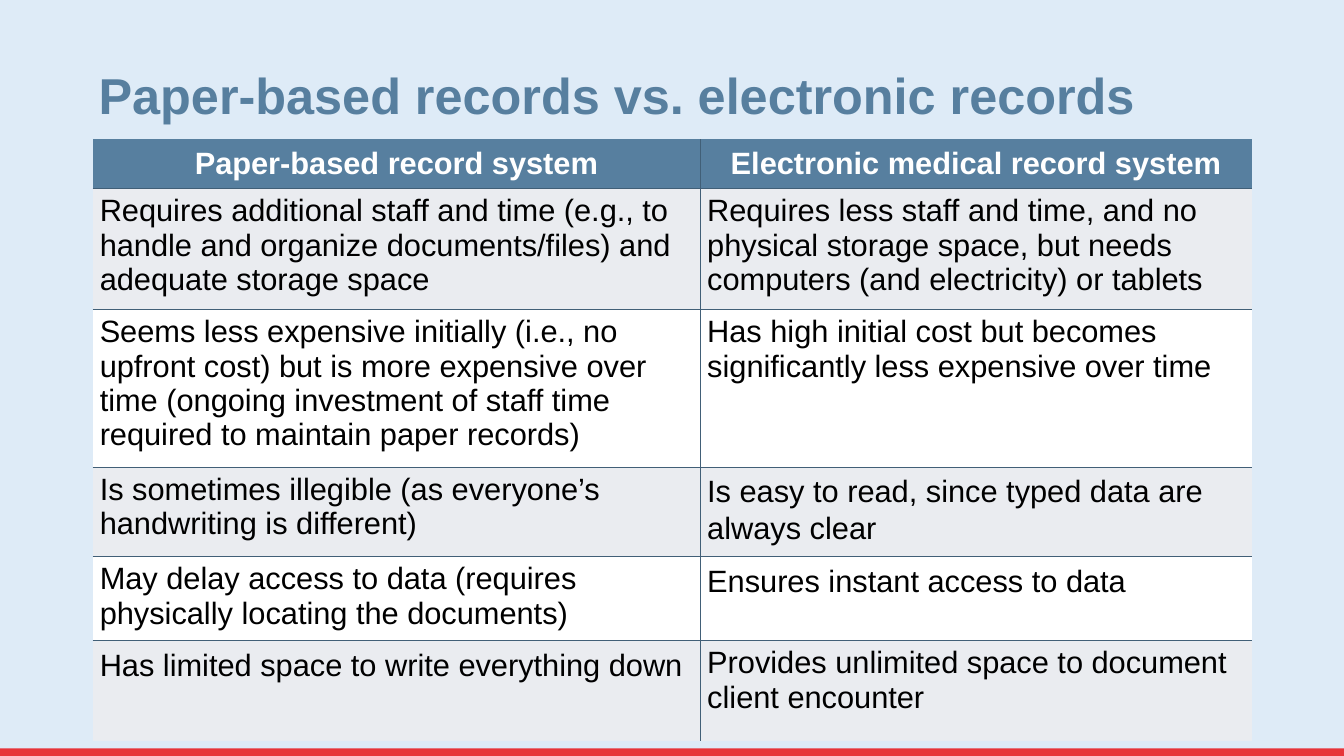
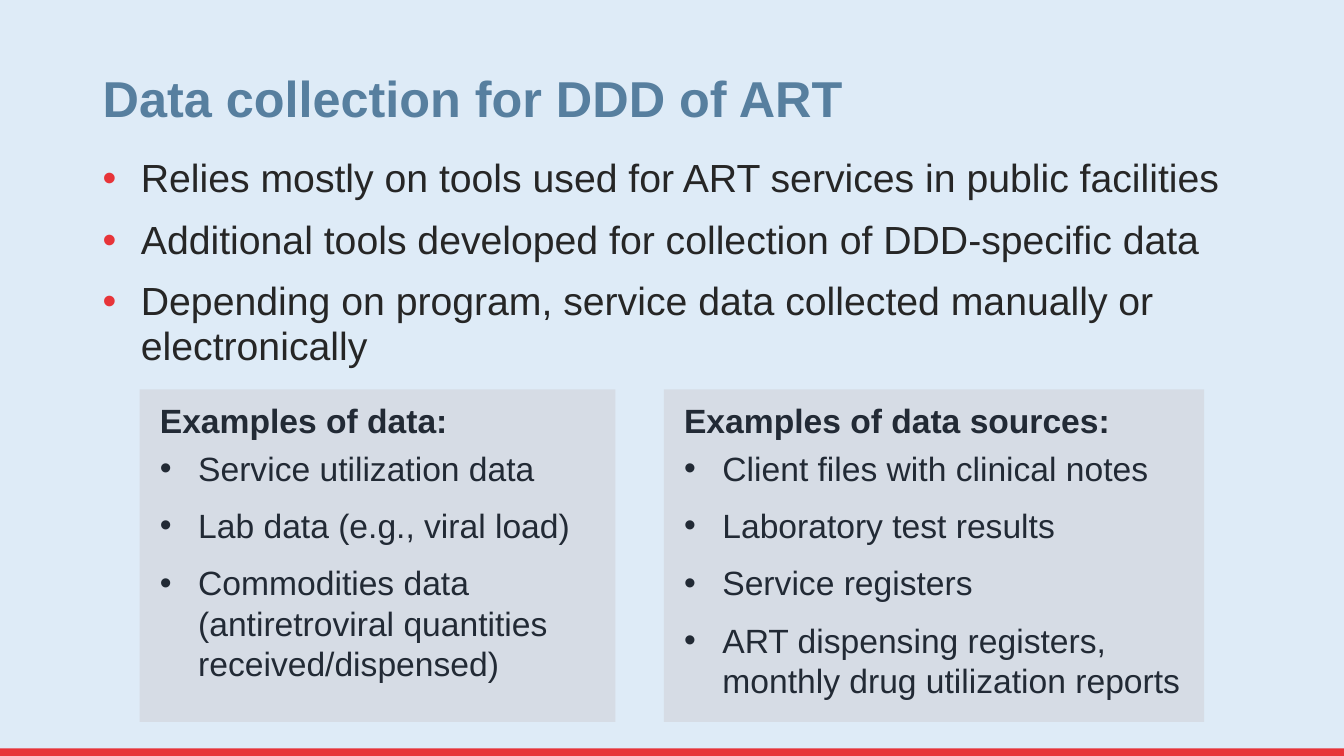
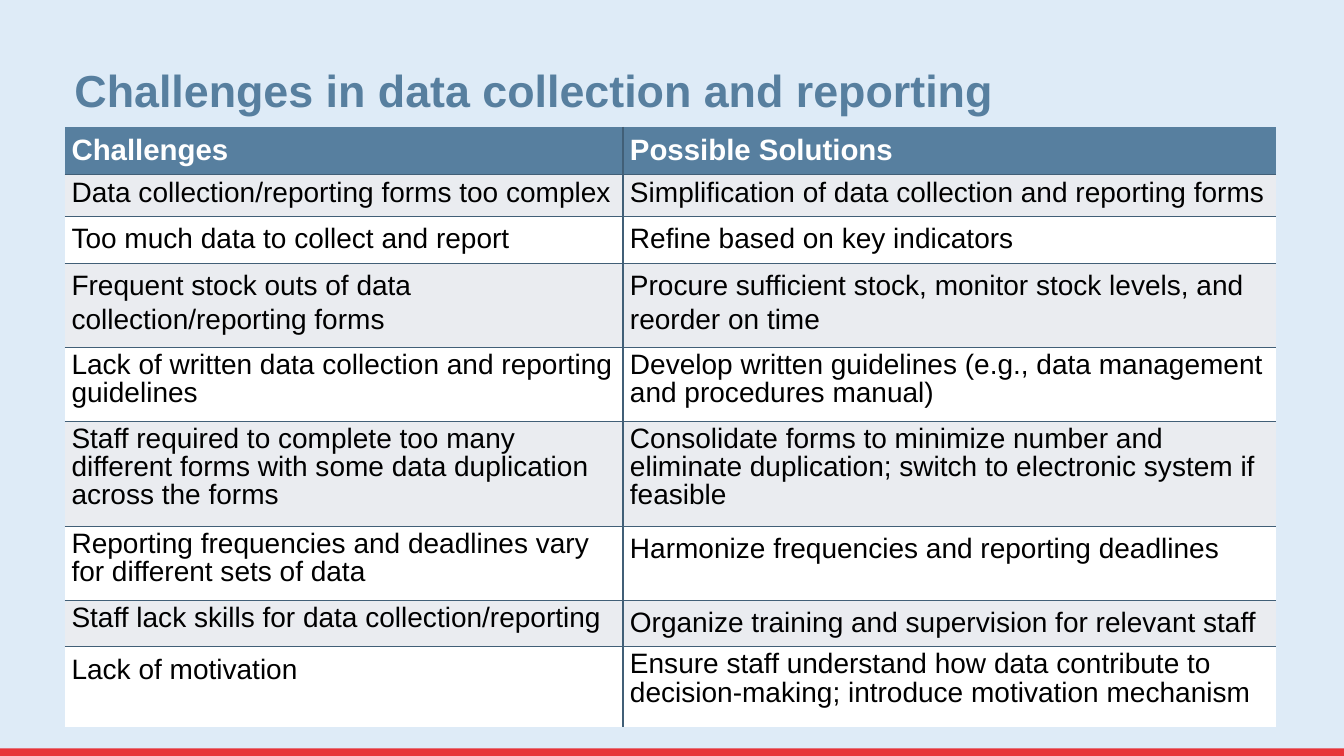
from dataclasses import dataclass

from lxml import etree
from pptx import Presentation
from pptx import util as u
from pptx.dml.color import RGBColor
from pptx.enum import shapes, text
from pptx.oxml import ns

COLORS = {
    "background": "DEEBF7", "band": "E73439", "accent": "577F9F",
    "rule": "415F77", "stripe": "EAECF0", "white": "FFFFFF",
    "black": "000000", "body": "262626", "card": "D6DCE5", "card_text": "222A35",
}
FONT = "Arial"
WIDTH, HEIGHT = u.Inches(13.33), u.Inches(7.5)
INDENT = u.Inches(0.38)
LOOSE, TIGHT = 1.07, 0.9  # line spacings


@dataclass(frozen=True)
class Frame:
    """Left, top, width and height in percent of the slide's size."""
    left: float
    top: float
    width: float
    height: float

    def emu(self) -> tuple:
        return across(self.left), down(self.top), across(self.width), down(self.height)


@dataclass(frozen=True)
class Style:
    size: float
    color: str
    bold: bool = False
    spacing: float = 1.0
    before: float = 0
    after: float = 0
    bullet: str = ""  # colour name of the bullet
    align: text.PP_ALIGN = text.PP_ALIGN.LEFT


@dataclass(frozen=True)
class Cell:
    words: str
    spacing: float = 1.0


@dataclass(frozen=True)
class Grid:
    left: float
    top: float
    columns: tuple
    rows: tuple
    header: Style
    size: float
    cells: tuple


@dataclass(frozen=True)
class Card:
    left: float
    width: float
    heading: str
    items: tuple


def across(percent: float) -> u.Emu:
    return u.Emu(round(WIDTH * percent / 100))


def down(percent: float) -> u.Emu:
    return u.Emu(round(HEIGHT * percent / 100))


def rgb(name: str) -> RGBColor:
    return RGBColor.from_string(COLORS[name])


def write(para, words: str, style: Style) -> None:
    para.text = words
    para.alignment = style.align
    para.line_spacing = style.spacing
    para.space_before, para.space_after = u.Pt(style.before), u.Pt(style.after)
    for span in para.runs:
        span.font.name, span.font.size = FONT, u.Pt(style.size)
        span.font.bold = style.bold
        span.font.color.rgb = rgb(style.color)
    if style.bullet:
        props = para._p.get_or_add_pPr()
        props.set("marL", str(INDENT))
        props.set("indent", str(-INDENT))
        color = etree.SubElement(props, ns.qn("a:buClr"))
        etree.SubElement(color, ns.qn("a:srgbClr"), val=COLORS[style.bullet])
        etree.SubElement(props, ns.qn("a:buFont"), typeface=FONT)
        etree.SubElement(props, ns.qn("a:buChar"), char="•")


def write_all(frame, lines: list) -> None:
    """Fill a text frame with (words, style) pairs, one per paragraph."""
    frame.word_wrap = True
    for index, (words, style) in enumerate(lines):
        para = frame.add_paragraph() if index else frame.paragraphs[0]
        write(para, words, style)


def add_panel(page, frame: Frame, color: str):
    panel = page.shapes.add_shape(shapes.MSO_SHAPE.RECTANGLE, *frame.emu())
    panel.shadow.inherit = False
    panel.fill.solid()
    panel.fill.fore_color.rgb = rgb(color)
    panel.line.fill.background()
    return panel


def add_text(page, frame: Frame, lines: list, anchor=text.MSO_ANCHOR.TOP) -> None:
    box = page.shapes.add_textbox(*frame.emu())
    write_all(box.text_frame, lines)
    box.text_frame.vertical_anchor = anchor


def add_page(deck, title: str, left: float, top: float, size: float = 36):
    """Start a slide with the shared background, bottom band and title."""
    page = deck.slides.add_slide(deck.slide_layouts[6])
    page.background.fill.solid()
    page.background.fill.fore_color.rgb = rgb("background")
    add_panel(page, Frame(0, 99, 100, 1), "band")
    style = Style(size, "accent", bold=True, spacing=TIGHT)
    add_text(page, Frame(left, top, 86.25, 11.6), [(title, style)], text.MSO_ANCHOR.BOTTOM)
    return page


def rule_cell(cell, inner: dict) -> None:
    """Rule the inner sides of a cell and leave the outer ones bare."""
    props = cell._tc.get_or_add_tcPr()
    for side, ruled in inner.items():
        line = etree.SubElement(props, ns.qn(f"a:ln{side}"), w=str(u.Pt(1)))
        if ruled:
            fill = etree.SubElement(line, ns.qn("a:solidFill"))
            etree.SubElement(fill, ns.qn("a:srgbClr"), val=COLORS["rule"])
        else:
            etree.SubElement(line, ns.qn("a:noFill"))


def add_grid(page, grid: Grid) -> None:
    frame = Frame(grid.left, grid.top, sum(grid.columns), sum(grid.rows))
    last_row, last_column = len(grid.rows) - 1, len(grid.columns) - 1
    table = page.shapes.add_table(last_row + 1, last_column + 1, *frame.emu()).table
    table.horz_banding = False
    for column, share in zip(table.columns, grid.columns):
        column.width = across(share)
    for row, share in zip(table.rows, grid.rows):
        row.height = down(share)
    for r, entries in enumerate(grid.cells):
        for c, entry in enumerate(entries):
            cell = table.cell(r, c)
            rule_cell(cell, {"L": c > 0, "R": c < last_column, "T": r > 0, "B": r < last_row})
            cell.margin_left = cell.margin_right = u.Inches(0.07)
            cell.margin_top = cell.margin_bottom = u.Inches(0.05)
            cell.fill.solid()
            fill = "accent" if r == 0 else "stripe" if r % 2 else "white"
            cell.fill.fore_color.rgb = rgb(fill)
            plain = Style(grid.size, "black", spacing=entry.spacing, after=8)
            write(cell.text_frame.paragraphs[0], entry.words, plain if r else grid.header)


def add_card(page, card: Card) -> None:
    panel = add_panel(page, Frame(card.left, 51.5, card.width, 44), "card")
    frame = panel.text_frame
    frame.vertical_anchor = text.MSO_ANCHOR.TOP
    frame.margin_left = u.Inches(0.2)
    frame.margin_top = frame.margin_right = frame.margin_bottom = u.Inches(0.1)
    heading = Style(24, "card_text", bold=True, after=6)
    item = Style(24, "card_text", after=12, bullet="card_text")
    write_all(frame, [(card.heading, heading)] + [(words, item) for words in card.items])


RECORD_SYSTEMS = Grid(
    6.9, 18.4, (45.2, 41.05), (6.2, 15.7, 19.7, 11.2, 10.5, 13.3),
    Style(22, "white", bold=True, spacing=LOOSE, after=8, align=text.PP_ALIGN.CENTER), 22,
    (
        (Cell("Paper-based record system"), Cell("Electronic medical record system")),
        (Cell("Requires additional staff and time (e.g., to handle and organize "
              "documents/files) and adequate storage space"),
         Cell("Requires less staff and time, and no physical storage space, but needs "
              "computers (and electricity) or tablets")),
        (Cell("Seems less expensive initially (i.e., no upfront cost) but is more expensive "
              "over time (ongoing investment of staff time required to maintain paper records)"),
         Cell("Has high initial cost but becomes significantly less expensive over time")),
        (Cell("Is sometimes illegible (as everyone’s handwriting is different)"),
         Cell("Is easy to read, since typed data are always clear", LOOSE)),
        (Cell("May delay access to data (requires physically locating the documents)"),
         Cell("Ensures instant access to data", LOOSE)),
        (Cell("Has limited space to write everything down", LOOSE),
         Cell("Provides unlimited space to document client encounter")),
    ),
)

COLLECTION_POINTS = (
    "Relies mostly on tools used for ART services in public facilities",
    "Additional tools developed for collection of DDD-specific data",
    "Depending on program, service data collected manually or electronically",
)

EXAMPLES = (
    Card(10.4, 35.4, "Examples of data:", (
        "Service utilization data",
        "Lab data (e.g., viral load)",
        "Commodities data (antiretroviral quantities received/dispensed)",
    )),
    Card(49.4, 40.2, "Examples of data sources:", (
        "Client files with clinical notes",
        "Laboratory test results",
        "Service registers",
        "ART dispensing registers, monthly drug utilization reports",
    )),
)

CHALLENGES = Grid(
    4.8, 16.8, (41.55, 48.6), (6.1, 5.5, 6.2, 11.1, 9.8, 13.9, 9.8, 6.1, 10.7),
    Style(21, "white", bold=True, spacing=LOOSE, after=8), 20,
    (
        (Cell("Challenges"), Cell("Possible Solutions")),
        (Cell("Data collection/reporting forms too complex", TIGHT),
         Cell("Simplification of data collection and reporting forms", TIGHT)),
        (Cell("Too much data to collect and report", LOOSE),
         Cell("Refine based on key indicators", LOOSE)),
        (Cell("Frequent stock outs of data collection/reporting forms", LOOSE),
         Cell("Procure sufficient stock, monitor stock levels, and reorder on time", LOOSE)),
        (Cell("Lack of written data collection and reporting guidelines", TIGHT),
         Cell("Develop written guidelines (e.g., data management and procedures manual)", TIGHT)),
        (Cell("Staff required to complete too many different forms with some data "
              "duplication across the forms", TIGHT),
         Cell("Consolidate forms to minimize number and eliminate duplication; switch to "
              "electronic system if feasible", TIGHT)),
        (Cell("Reporting frequencies and deadlines vary for different sets of data", TIGHT),
         Cell("Harmonize frequencies and reporting deadlines", LOOSE)),
        (Cell("Staff lack skills for data collection/reporting", TIGHT),
         Cell("Organize training and supervision for relevant staff", LOOSE)),
        (Cell("Lack of motivation", LOOSE),
         Cell("Ensure staff understand how data contribute to decision-making; introduce "
              "motivation mechanism", TIGHT)),
    ),
)


def main() -> None:
    deck = Presentation()
    deck.slide_width, deck.slide_height = WIDTH, HEIGHT

    # Record systems compared
    page = add_page(deck, "Paper-based records vs. electronic records", 6.6, 5.6)
    add_grid(page, RECORD_SYSTEMS)

    # Data collection with two example cards
    page = add_page(deck, "Data collection for DDD of ART", 6.9, 6.1)
    point = Style(28, "body", spacing=0.95, before=12, bullet="band")
    add_text(page, Frame(6.9, 20.1, 86.25, 34), [(words, point) for words in COLLECTION_POINTS])
    for card in EXAMPLES:
        add_card(page, card)

    # Challenges and solutions
    page = add_page(deck, "Challenges in data collection and reporting", 4.8, 4.5, size=32)
    add_grid(page, CHALLENGES)

    deck.save("out.pptx")


if __name__ == "__main__":
    main()
